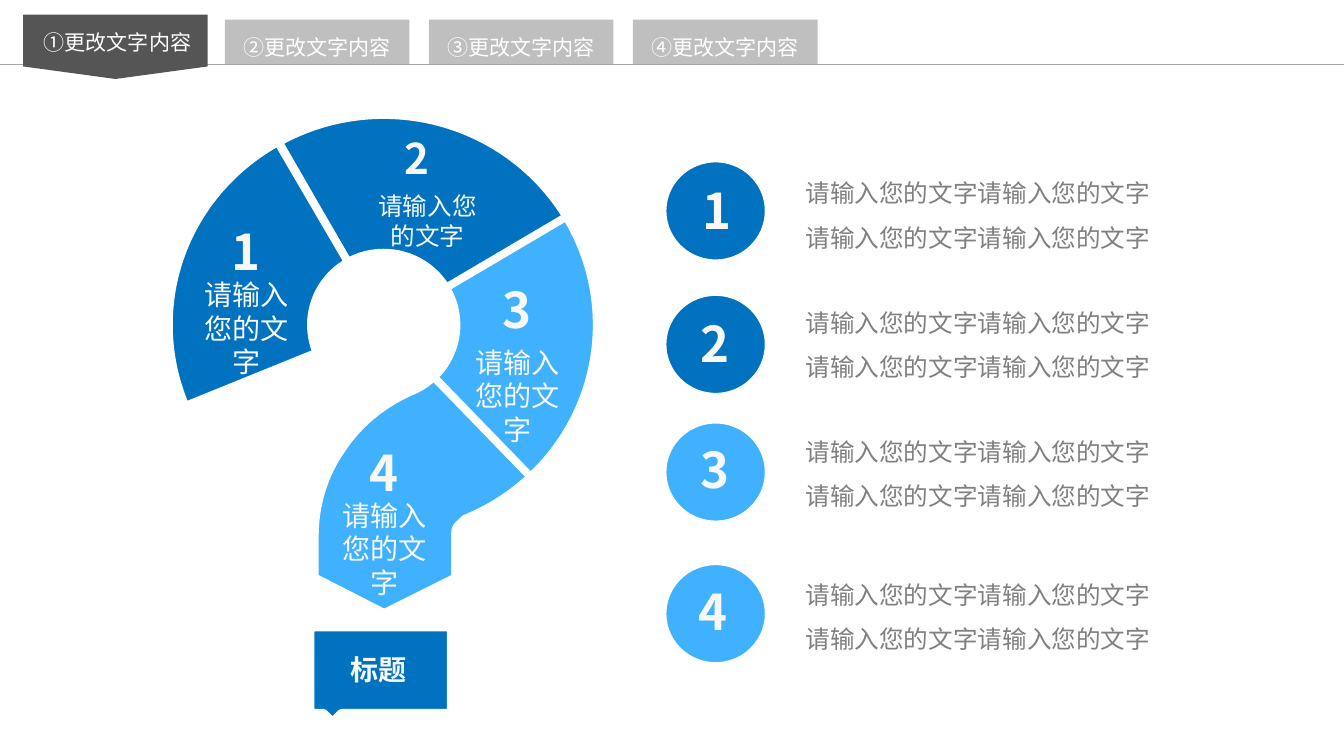
from dataclasses import dataclass
from math import ceil, cos, floor, radians, sin, tan

from lxml.etree import SubElement
from pptx import Presentation
from pptx.dml.color import RGBColor as RGB
from pptx.enum.shapes import MSO_CONNECTOR as CONN, MSO_SHAPE as SHAPE
from pptx.enum.text import MSO_ANCHOR as ANCHOR, MSO_AUTO_SIZE as AUTO, PP_ALIGN as ALIGN
from pptx.oxml.ns import qn
from pptx.util import Inches, Pt


@dataclass(frozen=True)
class Theme:
    font: str = "Noto Sans CJK SC"
    dark: str = "0072BF"
    light: str = "3FB1FF"
    white: str = "FFFFFF"
    pale: str = "F8F8F8"
    body: str = "808080"
    rule: str = "A6A6A6"
    tab: str = "BFBFBF"
    active: str = "555555"
    number: int = 28
    small_number: int = 24
    label: int = 16
    text: int = 14
    tab_text: int = 12
    border: float = 4.5
    hairline: float = 0.75


def on_arc(radii, angle, pull=0):
    a = radians(angle)
    return (CENTER[0] + radii[0] * (cos(a) - pull * sin(a)),
            CENTER[1] + radii[1] * (sin(a) + pull * cos(a)))


def arc(radii, start, end):
    low, high = sorted((start, end))
    quarters = [90 * i for i in range(floor(low / 90) + 1, ceil(high / 90))]
    stops = sorted([start, *quarters, end], reverse=start > end)
    segments = []
    for a, b in zip(stops, stops[1:]):
        pull = 4 / 3 * tan(radians(b - a) / 4)
        segments.append((on_arc(radii, a, pull), on_arc(radii, b, -pull), on_arc(radii, b)))
    return segments


def ring(start, end, outer, stem=None):
    link = stem or [(on_arc(INNER, end),)]
    return [(on_arc(outer, start),), *arc(outer, start, end), *link, *arc(INNER, end, start)]


class Deck:
    def __init__(self, theme, width, height, cols, rows):
        self.t = theme
        self.prs = Presentation()
        self.prs.slide_width, self.prs.slide_height = Inches(width), Inches(height)
        self.col = self.prs.slide_width / cols
        self.row = self.prs.slide_height / rows
        self.s = self.prs.slides.add_slide(self.prs.slide_layouts[6])

    def x(self, cols):
        return round(cols * self.col)

    def y(self, rows):
        return round(rows * self.row)

    def box(self, left, top, width, height):
        return self.x(left), self.y(top), self.x(width), self.y(height)

    def paint(self, sp, fill, border=True):
        sp.shadow.inherit = False
        sp.fill.solid()
        sp.fill.fore_color.rgb = RGB.from_string(fill)
        if border:
            sp.line.color.rgb = RGB.from_string(self.t.white)
            sp.line.width = Pt(self.t.border)
        else:
            sp.line.fill.background()

    def outline(self, segments, fill):
        start, *rest = [(self.x(seg[-1][0]), self.y(seg[-1][1])) for seg in segments]
        builder = self.s.shapes.build_freeform(*start)
        builder.add_line_segments(rest, close=True)
        sp = builder.convert_to_shape()
        for line, seg in zip(list(sp._element.iter(qn("a:lnTo"))), segments[1:]):
            if len(seg) == 3:
                bezier = SubElement(line.getparent(), qn("a:cubicBezTo"))
                for px, py in seg:
                    SubElement(bezier, qn("a:pt"), x=str(self.x(px) - sp.left),
                               y=str(self.y(py) - sp.top))
                line.getparent().replace(line, bezier)
        self.paint(sp, fill)

    def circle(self, left, top, width, height, fill):
        self.paint(self.s.shapes.add_shape(SHAPE.OVAL, *self.box(left, top, width, height)), fill)

    def text(self, place, lines, size, color, bold=False, frame=None, para=None, fill=None):
        if fill:
            sp = self.s.shapes.add_shape(SHAPE.RECTANGLE, *self.box(*place))
            self.paint(sp, fill, border=False)
        else:
            sp = self.s.shapes.add_textbox(*self.box(*place))
        tf = sp.text_frame
        for name, value in {"word_wrap": True, "auto_size": AUTO.SHAPE_TO_FIT_TEXT,
                            "vertical_anchor": ANCHOR.TOP, **(frame or {})}.items():
            setattr(tf, name, value)
        for i, line in enumerate(lines):
            p = tf.add_paragraph() if i else tf.paragraphs[0]
            for name, value in {"alignment": ALIGN.LEFT, **(para or {})}.items():
                setattr(p, name, value)
            r = p.add_run()
            r.text = line
            for name, value in {"name": self.t.font, "size": Pt(size), "bold": bold}.items():
                setattr(r.font, name, value)
            r.font.color.rgb = RGB.from_string(color)
            SubElement(r.font._element, qn("a:ea"), typeface=self.t.font)

    def number(self, left, top, digit, size, height=5.7, fill=None):
        self.text((left, top, 4.4, height), [digit], size, self.t.pale, True,
                  {"word_wrap": False}, fill=fill)

    def rule(self, row):
        c = self.s.shapes.add_connector(CONN.STRAIGHT, 0, self.y(row),
                                        self.prs.slide_width, self.y(row))
        c.line.color.rgb = RGB.from_string(self.t.rule)
        c.line.width = Pt(self.t.hairline)
        SubElement(c._element.spPr, qn("a:effectLst"))

    def tab(self, label, center, middle, depth, point, fill, text_left, text_top):
        sp = self.s.shapes.add_shape(SHAPE.PENTAGON, *self.box(
            center - depth / 2, middle - TAB_WIDTH / 2, depth, TAB_WIDTH))
        sp.rotation = 90
        sp.adjustments[0] = point
        self.paint(sp, fill, border=False)
        self.text((text_left, text_top, 22.6, 2.7), [label], self.t.tab_text, self.t.white,
                  frame={**FLUSH, "auto_size": AUTO.NONE},
                  para={"alignment": ALIGN.CENTER, "line_spacing": 1.2})


MARGINS = ("margin_left", "margin_top", "margin_right", "margin_bottom")
FLUSH = dict.fromkeys(MARGINS, 0)
SNUG = dict(zip(MARGINS, map(Inches, (0.08, 0.04, 0.08, 0.04))))
CENTERED = {"alignment": ALIGN.CENTER}
CENTER, OUTER, WIDE, INNER = (30.35, 25.7), (16.85, 16.6), (17, 16.6), (5.75, 5.7)
HOOK, SPLIT_1, SPLIT_2, SPLIT_3, TAIL = 157.3, 240.5, 329, 406.4, 427.5
TAB_WIDTH = 14.6
PROMPT = "请输入您的文字"


def main():
    t = Theme()
    d = Deck(t, 10.63, 5.91, 106.3, 59.1)

    callout = [(24.55, 49.65), (35.65, 49.65), (35.65, 56.4), (27, 56.4),
               (26.3, 57.1), (25.6, 56.4), (24.55, 56.4)]
    d.outline([(point,) for point in callout], t.dark)
    stem = [((36.6, 41.2), (36.4, 41.4), (36.2, 41.6)),
            ((36, 41.8), (36, 42.1), (36, 42.4)),
            ((36, 45.7),), ((30.4, 48.5),), ((24.9, 45.7),), ((24.9, 42.4),),
            ((24.9, 40), (25.6, 37.6), (27, 35.6)),
            ((28.3, 33.6), (30.2, 32), on_arc(INNER, TAIL))]
    d.outline(ring(HOOK, TAIL, OUTER, stem), t.light)
    for start, end, outer, fill in ((SPLIT_1, SPLIT_2 + 2, OUTER, t.dark),
                                    (SPLIT_2, SPLIT_3, OUTER, t.light),
                                    (HOOK, SPLIT_1, WIDE, t.dark)):
        d.outline(ring(start, end, outer), fill)

    for digit, left, top, size, height, label, label_size in (
            ("1", 17.34, 17, t.number, 5.7, (14.44, 21.46, 10.1, 9.1), t.label),
            ("2", 31, 10, t.small_number, 5.1, (28.82, 14.64, 10, 5.7), t.text),
            ("3", 38.8, 21.6, t.number, 5.7, (35.9, 26.82, 10.1, 9.1), t.label),
            ("4", 28.25, 34.5, t.number, 5.7, (25.4, 38.9, 10.1, 9.1), t.label)):
        d.number(left, top, digit, size, height)
        d.text(label, [PROMPT], label_size, t.pale, para=CENTERED)
    d.text((24.95, 51.24, 10, 3.5), ["标题"], t.label, t.pale, True, SNUG, CENTERED)

    for digit, top, left, number_top, text_top, fill, backing in (
            ("1", 12.54, 54.6, 13.8, 12.54, t.dark, t.dark),
            ("2", 23.1, 54.4, 24.3, 22.8, t.dark, None),
            ("3", 33.2, 54.4, 34.3, 33, t.light, None),
            ("4", 44.4, 54.24, 45.5, 44.3, t.light, None)):
        d.circle(52.4, top, 8.4, 8.3, fill)
        d.number(left, number_top, digit, t.number, fill=backing)
        d.text((62.9, text_top, 35.1, 7.9), [PROMPT * 2] * 2, t.text, t.body,
               frame=SNUG, para={"line_spacing": 1.5})

    d.rule(5.1)
    for i, mark in enumerate("②③④"):
        d.tab(f"{mark}更改文字内容", 25.08 + 16.14 * i, 3.3, 3.5, 0, t.tab,
              13.8 + 16.14 * i, 2.35)
    d.tab("①更改文字内容", 9.13, 3.7, 5.1, 0.194, t.active, -2, 1.95)

    d.prs.save("out.pptx")


if __name__ == "__main__":
    main()
